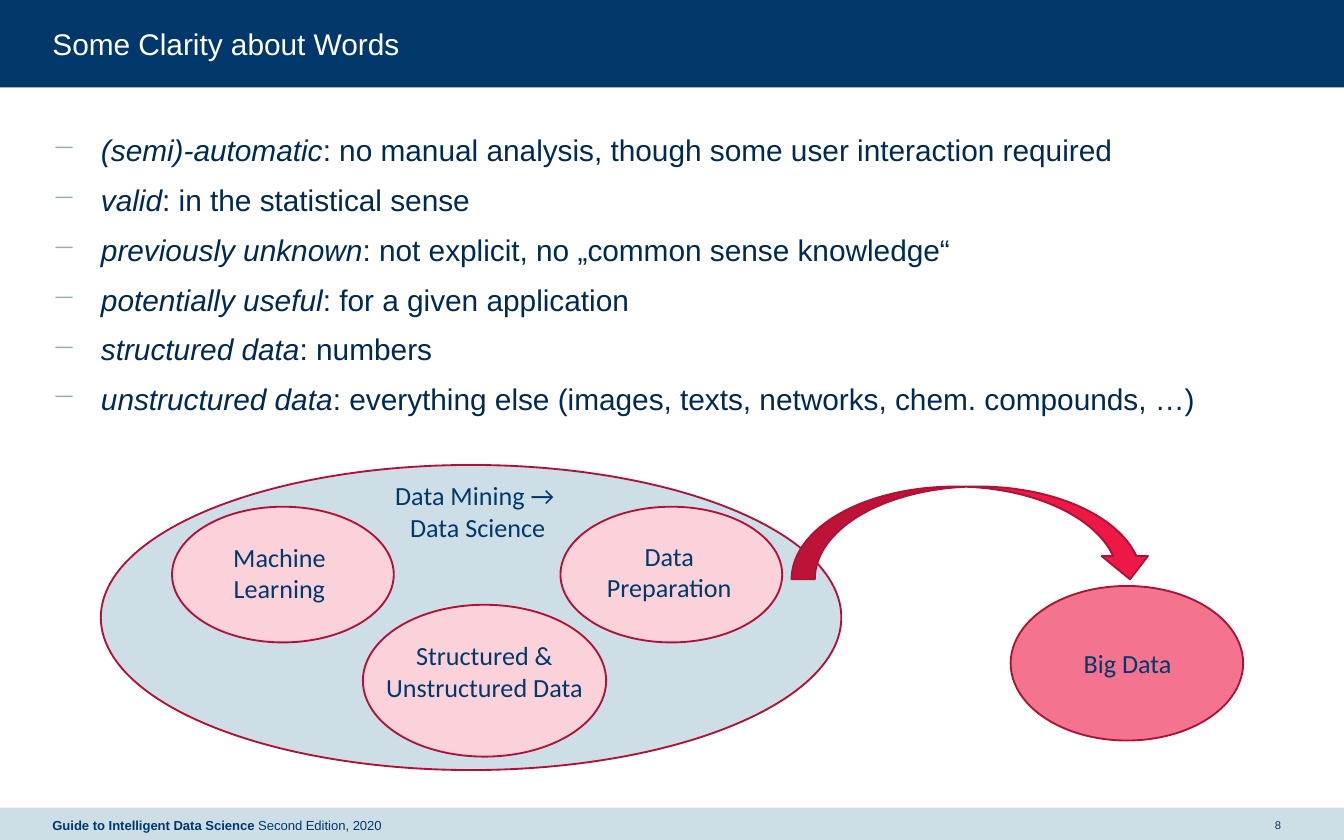
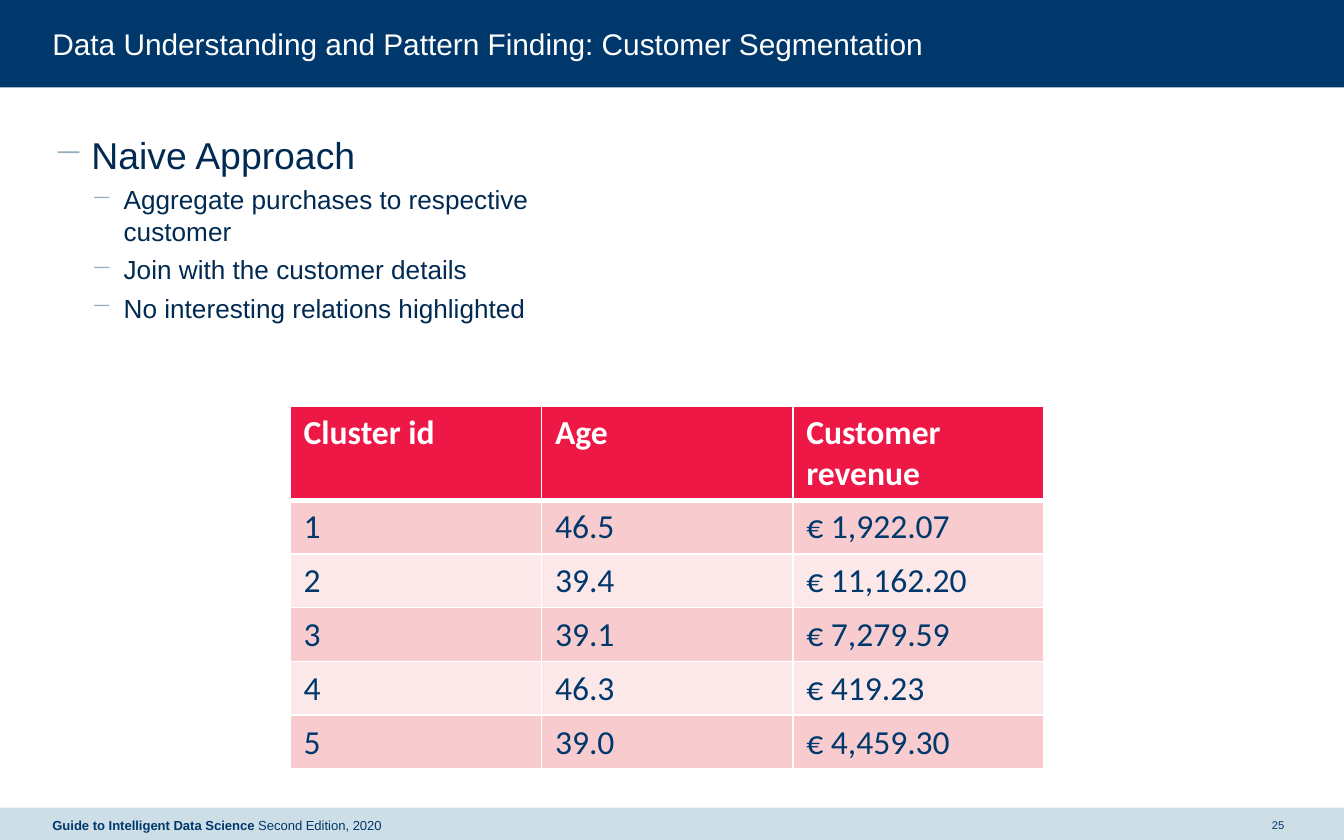
"""Build two lecture slides: a glossary with a concept map, and a segmentation table."""
import copy
from dataclasses import dataclass

from lxml import etree
from pptx import Presentation
from pptx import util as u
from pptx.dml.color import RGBColor
from pptx.enum import shapes, text
from pptx.oxml import ns


@dataclass(frozen=True)
class Theme:
    navy: str = "00386C"
    ink: str = "002A51"
    mist: str = "CDDEE7"
    dash: str = "92AEBC"
    white: str = "FFFFFF"
    red: str = "ED1846"
    outline: str = "AF1234"
    rose: str = "F47490"
    blush: str = "FBD1DA"
    bands: tuple = ("F8CCCF", "FCE8E9")
    title: int = 16
    term: int = 16
    heading: int = 20
    detail: int = 14
    label: int = 14
    cell: int = 18
    footer: int = 7
    number: int = 6


theme = Theme()
PX = 9144
CENTER = text.PP_ALIGN.CENTER
MIDDLE = text.MSO_ANCHOR.MIDDLE
FIT = text.MSO_AUTO_SIZE.SHAPE_TO_FIT_TEXT


def write(para, words, size, color, font="Arial", bold=False, italic=False):
    for index, line in enumerate(words.split("\n")):
        if index:
            para.add_line_break()
            para._p[-1].append(copy.deepcopy(span._r.rPr))
        span = para.add_run()
        span.text = line
        span.font.size = u.Pt(size)
        span.font.name = font
        span.font.bold = bold
        span.font.italic = italic
        span.font.color.rgb = RGBColor.from_string(color)


def add_box(page, place, kind=None, fill=None, line=None, inset=0):
    place = [length * PX for length in place]
    if kind is None:
        box = page.shapes.add_textbox(*place)
        frame = box.text_frame
        frame.word_wrap = True
        if inset == 0:
            frame.margin_left = frame.margin_right = 0
            frame.margin_top = frame.margin_bottom = 0
        return box
    box = page.shapes.add_shape(kind, *place)
    box.shadow.inherit = False
    box.fill.solid()
    box.fill.fore_color.rgb = RGBColor.from_string(fill)
    if line:
        box.line.color.rgb = RGBColor.from_string(line)
        box.line.width = u.Pt(1)
    else:
        box.line.fill.background()
    return box


deck = Presentation()
deck.slide_width = 1000 * PX
deck.slide_height = 625 * PX
layout = deck.slide_layouts[5]

term_style = (0, theme.term, 30, 30, 7.5)
heading_style = (0, theme.heading, 29, 28, 7.5)
detail_style = (1, theme.detail, 53, 24, 3.8)

terms = [
    (" ", "(semi)-automatic", ": no manual analysis, though some user interaction required"),
    (" ", "valid", ": in the statistical sense"),
    (" ", "previously unknown", ": not explicit, no „common sense knowledge“"),
    (" ", "potentially useful", ": for a given application"),
    (" ", "structured data", ": numbers"),
    ("", " unstructured data", ": everything else (images, texts, networks, chem. compounds, …)"),
]
approach = [
    (heading_style, ("Naive Approach",)),
    (detail_style, ("Aggregate purchases to respective customer",)),
    (detail_style, ("Join with the customer details",)),
    (detail_style, ("No interesting relations highlighted",)),
]
outlines = [
    ("Some Clarity about Words", "8", 916, [(term_style, term) for term in terms]),
    ("Data Understanding and Pattern Finding: Customer Segmentation", "25", 439, approach),
]

pages = []
for title, number, body_width, bullets in outlines:
    page = deck.slides.add_slide(layout)
    pages.append(page)

    heading = page.shapes.title
    heading.left, heading.top, heading.width, heading.height = (
        length * PX for length in (39, 19, 922, 27))
    frame = heading.text_frame
    frame.margin_left = frame.margin_right = frame.margin_top = frame.margin_bottom = 0
    frame.vertical_anchor = text.MSO_ANCHOR.TOP
    frame.auto_size = FIT
    frame.paragraphs[0].alignment = text.PP_ALIGN.LEFT
    write(frame.paragraphs[0], title, theme.title, theme.white)

    frame = add_box(page, (941, 601, 20, 26)).text_frame
    frame.vertical_anchor = MIDDLE
    frame.paragraphs[0].alignment = CENTER
    write(frame.paragraphs[0], number, theme.number, theme.navy)

    frame = add_box(page, (39, 98, body_width, 471)).text_frame
    for index, (style, spans) in enumerate(bullets):
        level, size, left, hang, before = style
        para = frame.add_paragraph() if index else frame.paragraphs[0]
        para.level = level
        para.space_before = u.Pt(before)
        props = para._p.get_or_add_pPr()
        props.set("marL", str(left * PX))
        props.set("indent", str(-hang * PX))
        color = etree.SubElement(props, ns.qn("a:buClr"))
        etree.SubElement(color, ns.qn("a:srgbClr"), val=theme.dash)
        etree.SubElement(props, ns.qn("a:buChar"), char="−")
        for position, words in enumerate(spans):
            if words:
                write(para, words, size, theme.ink, italic=position == 1)

    frame = add_box(page, (39, 601, 439, 26)).text_frame
    frame.vertical_anchor = MIDDLE
    write(frame.paragraphs[0], "Guide to Intelligent Data Science ",
          theme.footer, theme.navy, bold=True)
    write(frame.paragraphs[0], "Second Edition, 2020", theme.footer, theme.navy)

words_page, segment_page = pages

for place, fill in [((0, 0, 1000, 65), theme.navy), ((0, 601, 1000, 26), theme.mist)]:
    band = add_box(words_page, place, shapes.MSO_SHAPE.RECTANGLE, fill)
    layout.shapes.element.insert(2, band.element)

ellipses = [
    ((752, 436, 173, 115), theme.rose),
    ((75, 346, 551, 227), theme.mist),
    ((270, 450, 181, 113), theme.blush),
    ((417, 377, 165, 101), theme.blush),
    ((128, 377, 165, 101), theme.blush),
]
for place, fill in ellipses:
    add_box(words_page, place, shapes.MSO_SHAPE.OVAL, fill, theme.outline)

labels = [
    ("Data Mining → \nData Science", (199, 352, 313, 57)),
    ("Big Data", (768, 477, 142, 34)),
    ("Machine Learning", (145, 398, 126, 57)),
    ("Data Preparation", (423, 397, 150, 57)),
    ("Structured & Unstructured Data", (274, 471, 173, 81)),
]
for words, place in labels:
    frame = add_box(words_page, place, inset=1).text_frame
    frame.auto_size = FIT
    frame.paragraphs[0].alignment = CENTER
    write(frame.paragraphs[0], words, theme.label, theme.navy, font="Calibri")

arrow = add_box(words_page, (689, 262, 69, 269), shapes.MSO_SHAPE.CURVED_RIGHT_ARROW,
                theme.red, theme.outline)
arrow.rotation = 270
arrow.element.spPr.find(ns.qn("a:xfrm")).set("flipH", "1")

clusters = [
    ("Cluster id", "Age", "Customer revenue"),
    ("1", "46.5", "€ 1,922.07"),
    ("2", "39.4", "€ 11,162.20"),
    ("3", "39.1", "€ 7,279.59"),
    ("4", "46.3", "€ 419.23"),
    ("5", "39.0", "€ 4,459.30"),
]
place = [length * PX for length in (216, 302, 562, 196)]
table = segment_page.shapes.add_table(len(clusters), 3, *place).table
for column in table.columns:
    column.width = 187 * PX
for row_index, values in enumerate(clusters):
    table.rows[row_index].height = 33 * PX
    header = row_index == 0
    fill = theme.red if header else theme.bands[(row_index - 1) % 2]
    for column_index, value in enumerate(values):
        cell = table.cell(row_index, column_index)
        cell.fill.solid()
        cell.fill.fore_color.rgb = RGBColor.from_string(fill)
        write(cell.text_frame.paragraphs[0], value, theme.cell,
              theme.white if header else theme.navy, font="Calibri", bold=header)
        props = cell._tc.get_or_add_tcPr()
        for position, edge in enumerate(("lnL", "lnR", "lnT", "lnB")):
            thick = (edge == "lnB" and header) or (edge == "lnT" and row_index == 1)
            border = etree.Element(ns.qn(f"a:{edge}"), w=str(u.Pt(3 if thick else 1)))
            paint = etree.SubElement(border, ns.qn("a:solidFill"))
            etree.SubElement(paint, ns.qn("a:srgbClr"), val=theme.white)
            props.insert(position, border)

deck.save("out.pptx")
